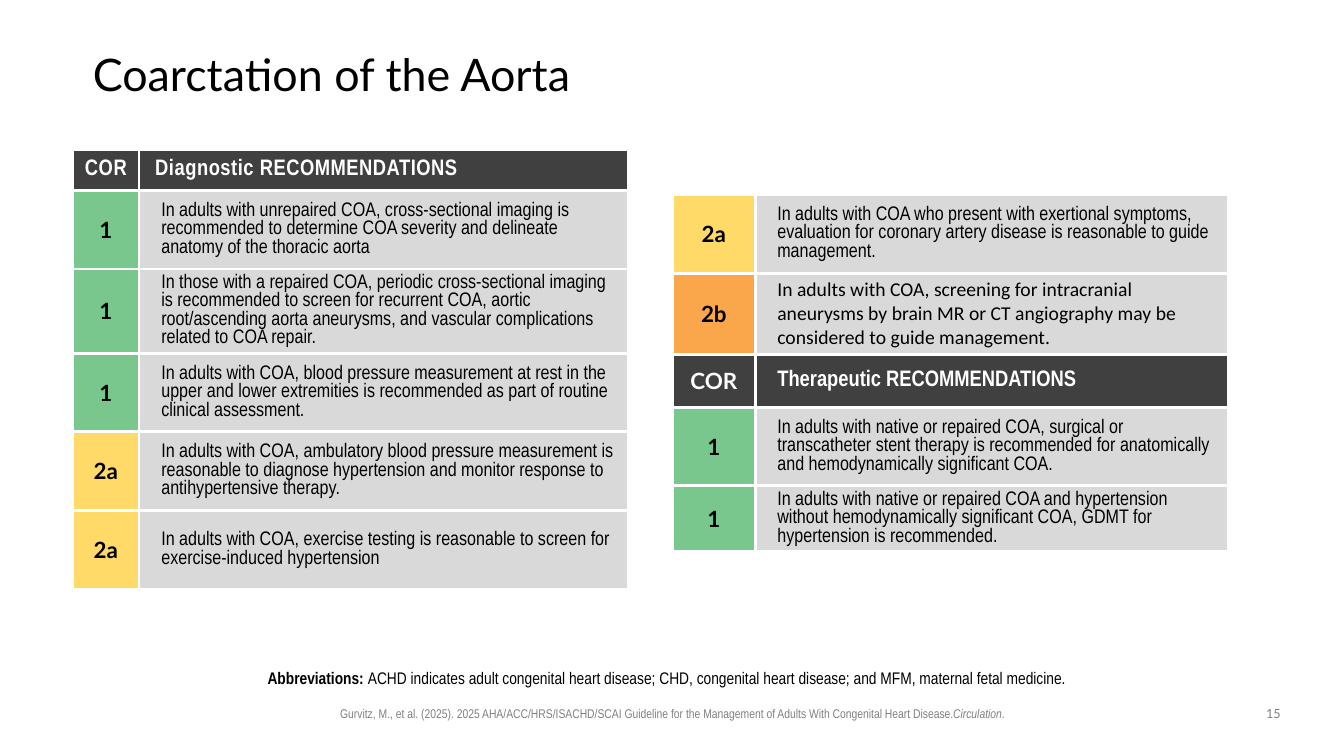
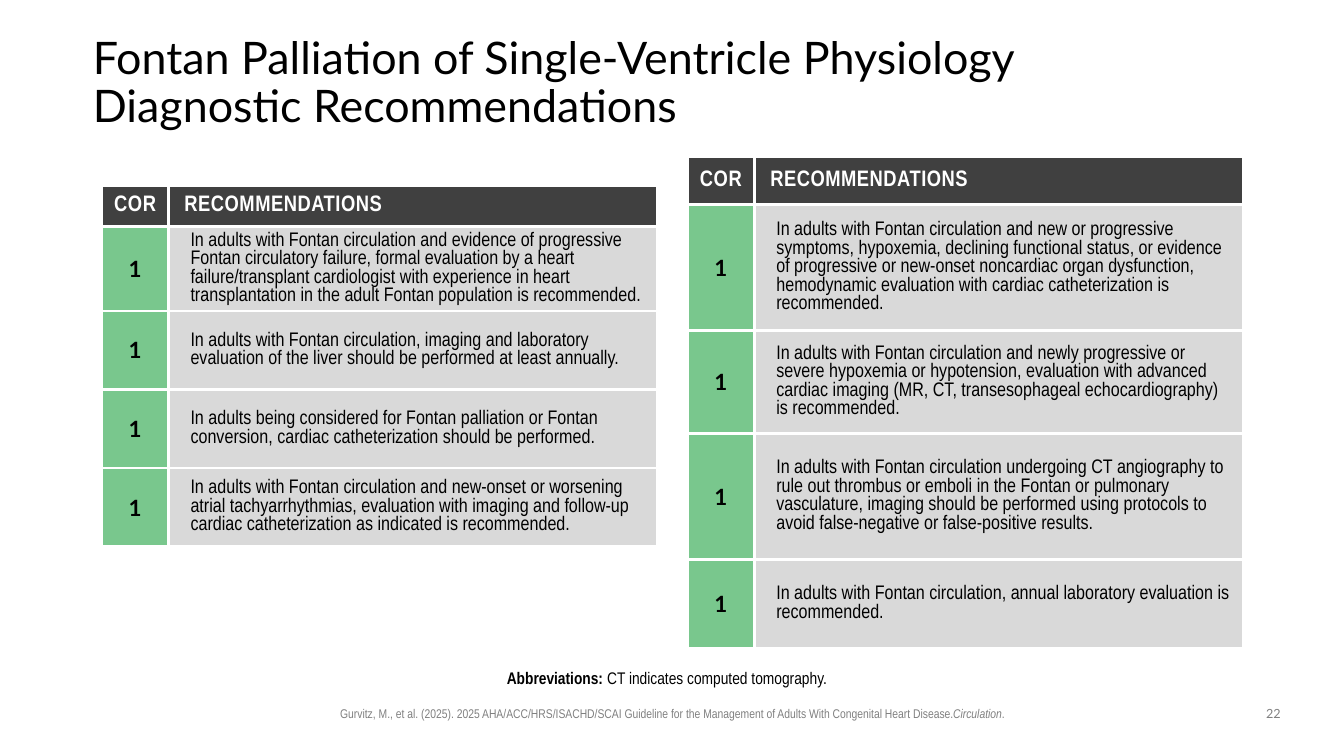
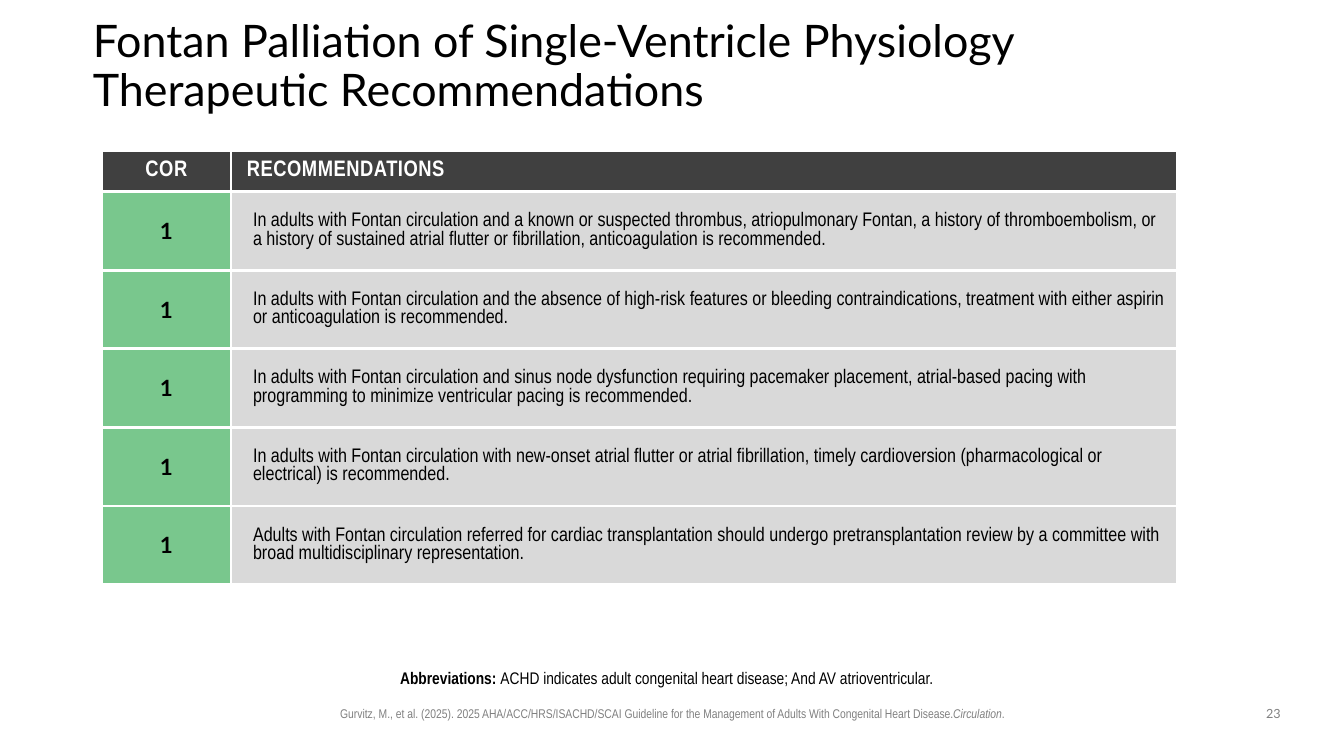
"""Build three slides of graded heart care recommendations."""
from copy import deepcopy

from pptx import Presentation
from pptx import util as u
from pptx.dml.color import RGBColor
from pptx.enum import text
from pptx.oxml import ns, parse_xml


class Theme:
    """Colours, type styles and insets shared by all slides."""
    dark, pale, white, black, grey = (
        RGBColor.from_string(c) for c in ("404040", "D9D9D9", "FFFFFF", "000000", "808080"))
    fills = {"COR": dark, "1": RGBColor(0x79, 0xC7, 0x8D),
             "2a": RGBColor(0xFF, 0xDA, 0x68), "2b": RGBColor(0xFA, 0xA7, 0x4B)}
    title = dict(name="Lato", size=u.Pt(32), color=black)
    head = dict(name="Arial Narrow", size=u.Pt(16), bold=True, color=white)
    grade = dict(name="Lato", size=u.Pt(16), bold=True, color=black)
    note = dict(name="Arial Narrow", size=u.Pt(14), bold=False, color=black)
    abbr = dict(name="Arial Narrow", size=u.Pt(12), bold=False, color=black)
    cite = dict(name="Arial Narrow", size=u.Pt(9), color=grey)
    page = dict(name="Lato", size=u.Pt(9), color=grey)
    tight = (0.05, 0.05, 0.05, 0.05)
    wide = (0.1, 0.05, 0.1, 0.05)
    edge = u.Pt(2.25)


class Deck:
    """Holds the theme and the current slide, and draws each kind of element."""

    def __init__(self, theme):
        """Start an empty wide deck."""
        self.theme = theme
        self.prs = Presentation()
        self.prs.slide_width, self.prs.slide_height = u.Inches(13.33), u.Inches(7.5)
        self.slide = None

    def style(self, run, form):
        """Apply a dict of format values to a run."""
        for key, val in form.items():
            if key == "color":
                run.font.color.rgb = val
            elif key == "spc":
                run.font._element.set("spc", str(val))
            else:
                setattr(run.font, key, val)

    def phrase(self, para, parts, **form):
        """Add styled runs to a paragraph and set its format."""
        for words, look in parts:
            run = para.add_run()
            run.text = words
            self.style(run, look)
        for key, val in form.items():
            setattr(para, key, val)

    def pad(self, item, sides):
        """Set the four insets of a frame or cell."""
        for side, val in zip(("left", "top", "right", "bottom"), sides):
            setattr(item, "margin_" + side, u.Inches(val))

    def title(self, words, top, high):
        """Add a slide and fill its title."""
        self.slide = self.prs.slides.add_slide(self.prs.slide_layouts[5])
        box = self.slide.shapes.title
        for key, val in dict(left=0.92, top=top, width=11.5, height=high).items():
            setattr(box, key, u.Inches(val))
        frame = box.text_frame
        frame.auto_size = text.MSO_AUTO_SIZE.NONE
        frame.vertical_anchor = text.MSO_ANCHOR.MIDDLE
        self.pad(frame, (0, 0, 0, 0))
        para = frame.paragraphs[0]
        para.text = words
        para.alignment, para.line_spacing = text.PP_ALIGN.LEFT, 0.9
        for run in para.runs:
            self.style(run, self.theme.title)
        for gap in para._p.findall(ns.qn("a:br")):
            gap.append(deepcopy(para.runs[0].font._element))

    def label(self, at, parts, sides=Theme.wide, anchor=text.MSO_ANCHOR.TOP, **form):
        """Add a centred text box."""
        frame = self.slide.shapes.add_textbox(*map(u.Inches, at)).text_frame
        frame.word_wrap, frame.vertical_anchor = True, anchor
        self.pad(frame, sides)
        self.phrase(frame.paragraphs[0], parts, alignment=text.PP_ALIGN.CENTER, **form)

    def foot(self, words, page):
        """Add the abbreviations, the citation and the page number."""
        look, cite = self.theme.abbr, self.theme.cite
        self.label((1.88, 6.42, 9.57, 0.46),
                   [("Abbreviations: ", look | dict(bold=True)), (words, look)],
                   (0, 0.05, 0.1, 0.05), text.MSO_ANCHOR.BOTTOM, line_spacing=0.9)
        self.label((2.36, 6.95, 8.62, 0.25), [
            ("Gurvitz, M., et al. (2025). 2025 AHA/ACC/HRS/ISACHD/SCAI Guideline for the "
             "Management of Adults With Congenital Heart Disease.", cite),
            ("Circulation", cite | dict(italic=True)), (".", cite)])
        self.label((12.42, 6.95, 0.42, 0.26), [(page, self.theme.page)])

    def cell(self, cell, words, look, fill, sides, indent=None):
        """Fill one table cell, centred unless it has an indent."""
        props = cell._tc.get_or_add_tcPr()
        for side in "LRTB":
            props.append(parse_xml(
                f'<a:ln{side} {ns.nsdecls("a")} w="{self.theme.edge}"><a:solidFill>'
                f'<a:srgbClr val="{self.theme.white}"/></a:solidFill></a:ln{side}>'))
        cell.fill.solid()
        cell.fill.fore_color.rgb = fill
        cell.vertical_anchor = text.MSO_ANCHOR.MIDDLE
        self.pad(cell, sides)
        para = cell.text_frame.paragraphs[0]
        if indent is None:
            para.alignment = text.PP_ALIGN.CENTER
        else:
            para._p.get_or_add_pPr().set("marL", str(u.Inches(indent)))
        self.phrase(para, [(words, look)])

    def table(self, left, top, cols, highs, rows):
        """Add a table of grades and recommendations."""
        t = self.theme
        size = map(u.Inches, (left, top, sum(cols), sum(highs)))
        grid = self.slide.shapes.add_table(len(rows), 2, *size).table
        grid.horz_banding = False
        grid.first_row = rows[0][0] == "COR"
        for col, wide in zip(grid.columns, cols):
            col.width = u.Inches(wide)
        for i, (high, (cor, words, *more)) in enumerate(zip(highs, rows)):
            grid.rows[i].height = u.Inches(high)
            one, two = grid.cell(i, 0), grid.cell(i, 1)
            fill = t.fills[cor]
            if cor != "COR":
                self.cell(one, cor, t.grade, fill, t.tight)
                self.cell(two, words, t.note | dict(*more), t.pale, t.wide, 0.12)
            elif i == 0:
                self.cell(one, cor, t.head | dict(spc=50), fill, t.wide)
                self.cell(two, words, t.head | dict(spc=40), fill, t.wide, 0.06)
            else:
                self.cell(one, cor, t.grade | dict(color=t.white), fill, t.tight)
                self.cell(two, words, t.head, fill, t.wide, 0.12)


def main():
    """Build and save the deck."""
    deck = Deck(Theme)
    slim, row, top = (0.66, 4.85), 0.78, 0.41

    deck.title("Coarctation of the Aorta", 0.4, 0.72)
    deck.table(0.72, 1.48, slim, [top] + [row] * 5, [
        ("COR", "Diagnostic RECOMMENDATIONS"),
        ("1", "In adults with unrepaired COA, cross-sectional imaging is recommended to determine "
              "COA severity and delineate anatomy of the thoracic aorta"),
        ("1", "In those with a repaired COA, periodic cross-sectional imaging is recommended to "
              "screen for recurrent COA, aortic root/ascending aorta aneurysms, and vascular "
              "complications related to COA repair."),
        ("1", "In adults with COA, blood pressure measurement at rest in the upper and lower "
              "extremities is recommended as part of routine clinical assessment."),
        ("2a", "In adults with COA, ambulatory blood pressure measurement is reasonable to "
               "diagnose hypertension and monitor response to antihypertensive therapy."),
        ("2a", "In adults with COA, exercise testing is reasonable to screen for "
               "exercise-induced hypertension")])
    deck.table(6.67, 1.93, (0.82, 4.69), [row, row, 0.52, row, 0.48], [
        ("2a", "In adults with COA who present with exertional symptoms, evaluation for coronary "
               "artery disease is reasonable to guide management."),
        ("2b", "In adults with COA, screening for intracranial aneurysms by brain MR or CT "
               "angiography may be considered to guide management.", dict(name="Calibri")),
        ("COR", "Therapeutic RECOMMENDATIONS"),
        ("1", "In adults with native or repaired COA, surgical or transcatheter stent therapy is "
              "recommended for anatomically and hemodynamically significant COA."),
        ("1", "In adults with native or repaired COA and hypertension without hemodynamically "
              "significant COA, GDMT for hypertension is recommended.")])
    deck.foot("ACHD indicates adult congenital heart disease; CHD, congenital heart disease; "
              "and MFM, maternal fetal medicine.", "15")

    name = "Fontan Palliation of Single-Ventricle Physiology\v"
    deck.title(name + "Diagnostic Recommendations", 0.4, 0.87)
    deck.table(1.01, 1.84, slim, [top] + [row] * 4, [
        ("COR", "RECOMMENDATIONS"),
        ("1", "In adults with Fontan circulation and evidence of progressive Fontan circulatory "
              "failure, formal evaluation by a heart failure/transplant cardiologist with "
              "experience in heart transplantation in the adult Fontan population is "
              "recommended."),
        ("1", "In adults with Fontan circulation, imaging and laboratory evaluation of the liver "
              "should be performed at least annually."),
        ("1", "In adults being considered for Fontan palliation or Fontan conversion, cardiac "
              "catheterization should be performed."),
        ("1", "In adults with Fontan circulation and new-onset or worsening atrial "
              "tachyarrhythmias, evaluation with imaging and follow-up cardiac catheterization "
              "as indicated is recommended.")])
    deck.table(6.82, 1.55, slim, [0.48, 1.25, 1.02, 1.25, 0.88], [
        ("COR", "RECOMMENDATIONS"),
        ("1", "In adults with Fontan circulation and new or progressive symptoms, hypoxemia, "
              "declining functional status, or evidence of progressive or new-onset noncardiac "
              "organ dysfunction, hemodynamic evaluation with cardiac catheterization is "
              "recommended."),
        ("1", "In adults with Fontan circulation and newly progressive or severe hypoxemia or "
              "hypotension, evaluation with advanced cardiac imaging (MR, CT, transesophageal "
              "echocardiography) is recommended."),
        ("1", "In adults with Fontan circulation undergoing CT angiography to rule out thrombus "
              "or emboli in the Fontan or pulmonary vasculature, imaging should be performed "
              "using protocols to avoid false-negative or false-positive results."),
        ("1", "In adults with Fontan circulation, annual laboratory evaluation is recommended.")])
    deck.foot("CT indicates computed tomography.", "22")

    deck.title(name + "Therapeutic Recommendations", 0.22, 0.9)
    deck.table(1.01, 1.49, (1.28, 9.39), [top] + [row] * 5, [
        ("COR", "RECOMMENDATIONS"),
        ("1", "In adults with Fontan circulation and a known or suspected thrombus, "
              "atriopulmonary Fontan, a history of thromboembolism, or a history of sustained "
              "atrial flutter or fibrillation, anticoagulation is recommended."),
        ("1", "In adults with Fontan circulation and the absence of high-risk features or "
              "bleeding contraindications, treatment with either aspirin or anticoagulation is "
              "recommended."),
        ("1", "In adults with Fontan circulation and sinus node dysfunction requiring pacemaker "
              "placement, atrial-based pacing with programming to minimize ventricular pacing "
              "is recommended."),
        ("1", "In adults with Fontan circulation with new-onset atrial flutter or atrial "
              "fibrillation, timely cardioversion (pharmacological or electrical) is "
              "recommended."),
        ("1", "Adults with Fontan circulation referred for cardiac transplantation should "
              "undergo pretransplantation review by a committee with broad multidisciplinary "
              "representation.")])
    deck.foot("ACHD indicates adult congenital heart disease; And AV atrioventricular.", "23")

    deck.prs.save("out.pptx")


if __name__ == "__main__":
    main()
